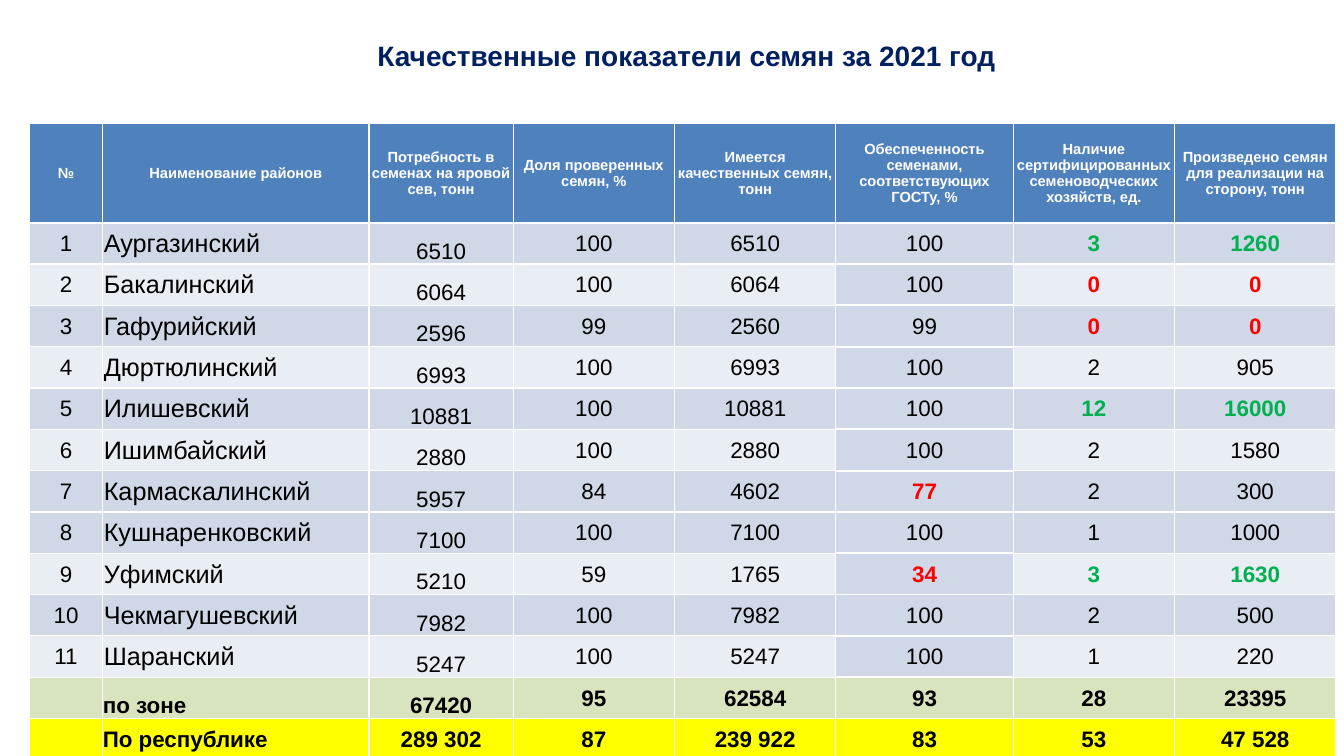
from dataclasses import dataclass

from lxml.etree import SubElement as Sub
from pptx import Presentation
from pptx.dml.color import RGBColor as Rgb
from pptx.enum.text import MSO_ANCHOR as Anchor, PP_ALIGN as Align
from pptx.oxml.ns import qn
from pptx.util import Inches, Pt


@dataclass
class Theme:
    font: str = "Arial"
    title: str = "002060"
    head: str = "4F81BD"
    white: str = "FFFFFF"
    ink: str = "000000"
    dark: str = "D0D8E8"
    light: str = "E9EDF4"
    zone: str = "D7E4BD"
    total: str = "FFFF00"
    good: str = "00B050"
    bad: str = "FF0000"
    big: float = 20
    name: float = 18
    body: float = 16
    small: float = 10.5


theme = Theme()


def style(para, size, color, bold, align):
    para.alignment = align
    font = para.font
    font.name = theme.font
    font.size = Pt(size)
    font.bold = bold
    font.color.rgb = Rgb.from_string(color)


def edge(cell, side, width):
    line = Sub(cell._tc.get_or_add_tcPr(), qn(f"a:ln{side}"), w=str(Pt(width)))
    fill = Sub(line, qn("a:solidFill"))
    Sub(fill, qn("a:srgbClr"), val=theme.white)


heads = [
    "№",
    "Наименование районов",
    "Потребность в семенах на яровой сев, тонн",
    "Доля проверенных семян, %",
    "Имеется качественных семян, тонн",
    "Обеспеченность семенами, соответствующих ГОСТу, %",
    "Наличие сертифицированных семеноводческих хозяйств, ед.",
    "Произведено семян для реализации на сторону, тонн",
]
areas = [
    ("Аургазинский", 6510, 100, 6510, 100, 3, 1260),
    ("Бакалинский", 6064, 100, 6064, 100, 0, 0),
    ("Гафурийский", 2596, 99, 2560, 99, 0, 0),
    ("Дюртюлинский", 6993, 100, 6993, 100, 2, 905),
    ("Илишевский", 10881, 100, 10881, 100, 12, 16000),
    ("Ишимбайский", 2880, 100, 2880, 100, 2, 1580),
    ("Кармаскалинский", 5957, 84, 4602, 77, 2, 300),
    ("Кушнаренковский", 7100, 100, 7100, 100, 1, 1000),
    ("Уфимский", 5210, 59, 1765, 34, 3, 1630),
    ("Чекмагушевский", 7982, 100, 7982, 100, 2, 500),
    ("Шаранский", 5247, 100, 5247, 100, 1, 220),
]
zone = ("", "по зоне", 67420, 95, 62584, 93, 28, 23395)
total = ("", "По республике", "289 302", 87, "239 922", 83, 53, "47 528")
rows = [heads, *[(n, *area) for n, area in enumerate(areas, 1)], zone, total]
fills = [theme.head]
fills += [theme.light if n in (2, 4, 6, 9, 11) else theme.dark for n in range(1, 12)]
fills += [theme.zone, theme.total]
last = len(areas)
widths = [0.73, 2.64, 1.43, 1.6, 1.6, 1.76, 1.6, 1.6]

deck = Presentation()
deck.slide_width = Inches(13.33)
deck.slide_height = Inches(7.5)
slide = deck.slides.add_slide(deck.slide_layouts[6])

box = slide.shapes.add_textbox(Inches(2.31), Inches(0.33), Inches(9), Inches(0.44))
box.text_frame.word_wrap = True
title = box.text_frame.paragraphs[0]
title.text = "Качественные показатели семян за 2021 год"
style(title, theme.big, theme.title, True, Align.CENTER)

table = slide.shapes.add_table(
    len(rows), len(heads), Inches(0.29), Inches(1.22), Inches(sum(widths)), Inches(6.32)
).table
table.first_row = False
table.horz_banding = False
for col, width in zip(table.columns, widths):
    col.width = Inches(width)

for r, row in enumerate(rows):
    table.rows[r].height = Inches(0.41 if r else 0.99)
    area = 1 <= r <= last
    for c, value in enumerate(row):
        cell = table.cell(r, c)
        low = (c == 2 and 1 <= r <= last + 1) or (c == 1 and r == last + 1)
        cell.vertical_anchor = Anchor.BOTTOM if low else Anchor.MIDDLE
        inset = 0.01 if area and 1 <= c <= 5 else 0
        cell.margin_left = cell.margin_right = Inches(inset)
        cell.margin_top = Inches(0.01)
        cell.margin_bottom = 0

        top, base = [
            1.5 if k == 1 or (c == 5 and 2 <= k <= last + 1) else 1 for k in (r, r + 1)
        ]
        for side, width in zip("LRTB", (1, 1, top, base)):
            edge(cell, side, width)
        cell.fill.solid()
        tint = theme.dark if area and c == 5 else fills[r]
        cell.fill.fore_color.rgb = Rgb.from_string(tint)

        color = theme.ink if r else theme.white
        if area and c >= 6:
            if row[6] >= 3:
                color = theme.good
            elif row[6] == 0:
                color = theme.bad
        elif area and c == 5 and value < 90:
            color = theme.bad
        bold = not area or color != theme.ink
        size = theme.body if r else theme.small
        if area and c == 1:
            size = theme.name
        para = cell.text_frame.paragraphs[0]
        para.text = str(value)
        style(para, size, color, bold, Align.LEFT if r and c == 1 else Align.CENTER)

deck.save("out.pptx")
